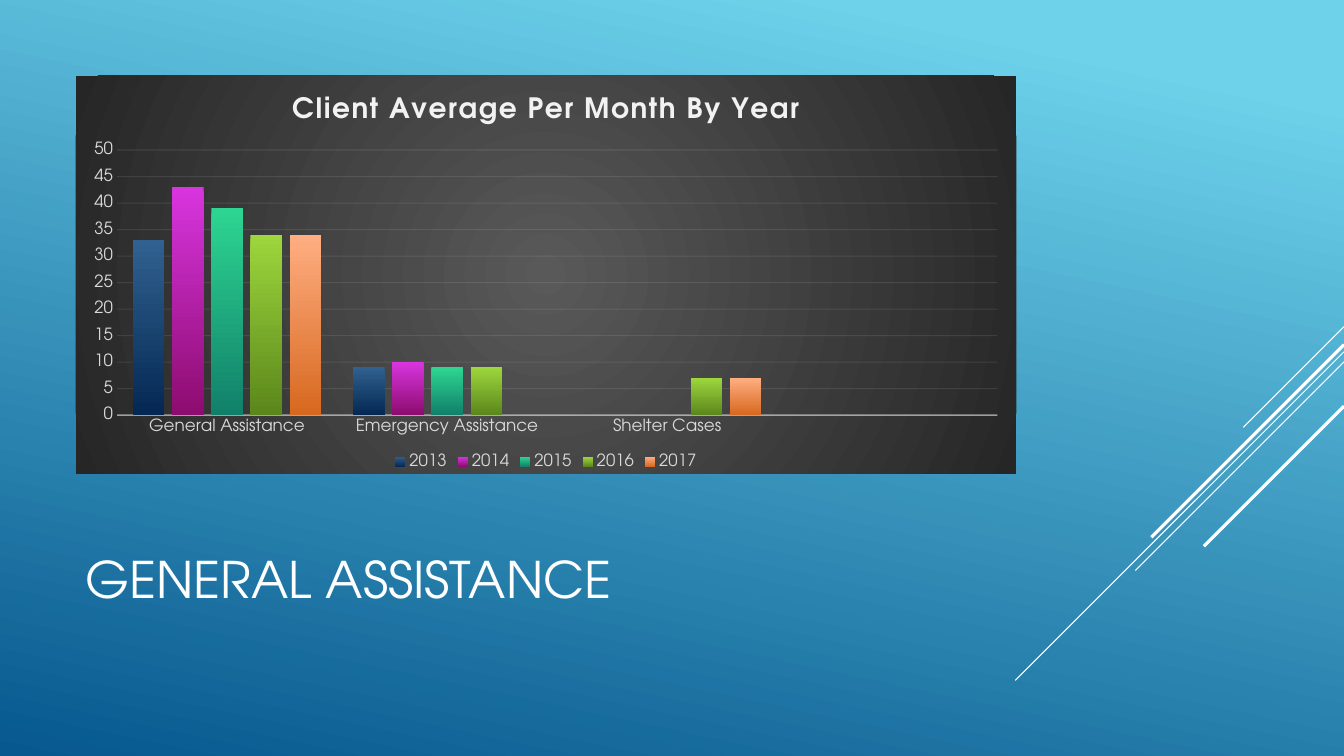
from lxml import etree
from pptx import Presentation
from pptx.chart.data import CategoryChartData
from pptx.dml.color import RGBColor
from pptx.enum import chart as ch, shapes, text
from pptx.oxml import parse_xml
from pptx.oxml.ns import nsdecls, qn
from pptx.util import Inches, Pt

FONT = "TeX Gyre Adventor"
COLORS = {"white": "FFFFFF", "label": "D9D9D9", "pale": "F2F2F2",
          "sky": "6ED2EB", "sea": "06588E", "grey": "595959", "dark": "262626"}
TITLE = "GENERAL ASSISTANCE"
CHART_TITLE = "Client Average Per Month By Year"
CATEGORIES = ["General Assistance", "Emergency Assistance", "Shelter Cases", ""]
SERIES = [  # year, values, top colour, bottom colour
    ("2013", (33, 9, None, None), "316190", "042853"),
    ("2014", (43, 10, None, None), "D835DF", "8D0C6F"),
    ("2015", (39, 9, None, None), "2ED592", "11806A"),
    ("2016", (34, 9, 7, None), "9DD63D", "5B871B"),
    ("2017", (34, None, 7, None), "FFAE82", "D7681F"),
]
PLOT = {"x": 0.044, "y": 0.187, "w": 0.936, "h": 0.666}  # shares of the chart
RIGHT = 13.33
DIAGONALS = [  # top at the right edge, run to the lower left, weight
    (3.24, 1.00, 0.75), (3.49, 3.26, 0.75), (3.59, 2.07, 0.75),
    (3.42, 1.91, 2.25), (4.03, 1.39, 2.25),
]


def rgb(value):
    return RGBColor.from_string(value)


def set_font(font, size, color, bold=False):
    values = {"name": FONT, "size": Pt(size), "bold": bold}
    for name, value in values.items():
        setattr(font, name, value)
    font.color.rgb = rgb(color)


def set_gradient(fill, stops, angle):
    """Two-stop gradient; angle is clockwise, in degrees."""
    fill.gradient()
    fill.gradient_angle = 360 - angle
    for stop, (position, color) in zip(fill.gradient_stops, stops):
        stop.position = position
        stop.color.rgb = rgb(color)


def set_line(line, width, opacity):
    line.width = Pt(width)
    line.color.rgb = rgb(COLORS["pale"])
    clr = next(line.fill._xPr.iter(qn("a:srgbClr")))
    etree.SubElement(clr, qn("a:alpha")).set("val", str(opacity * 1000))


def add_diagonal(s, top, run, width):
    line = s.shapes.add_connector(
        shapes.MSO_CONNECTOR.STRAIGHT, Inches(RIGHT), Inches(top),
        Inches(RIGHT - run), Inches(top + run))
    line.line.color.rgb = rgb(COLORS["white"])
    line.line.width = Pt(width)
    etree.SubElement(line._element.spPr, qn("a:effectLst"))


def add_title(s):
    box = s.shapes.add_textbox(Inches(0.75), Inches(4.91), Inches(9.33), Inches(1.65))
    tf = box.text_frame
    tf.word_wrap = True
    tf.vertical_anchor = text.MSO_ANCHOR.MIDDLE
    r = tf.paragraphs[0].add_run()
    r.text = TITLE
    set_font(r.font, 36, COLORS["white"])


def style_chart_area(chart):
    """Radial background for the chart and a fixed inner plot area."""
    stops = "".join(
        f'<a:gs pos="{pos}"><a:srgbClr val="{COLORS[name]}"/></a:gs>'
        for pos, name in ((0, "grey"), (100000, "dark")))
    area = parse_xml(
        f'<c:spPr {nsdecls("c", "a")}><a:gradFill><a:gsLst>{stops}</a:gsLst>'
        '<a:path path="circle"><a:fillToRect l="50000" t="50000" r="50000" b="50000"/>'
        '</a:path></a:gradFill><a:ln><a:noFill/></a:ln></c:spPr>')
    root = chart._chartSpace
    root.find(qn("c:chart")).addnext(area)

    modes = '<c:xMode val="edge"/><c:yMode val="edge"/>'
    sizes = "".join(f'<c:{key} val="{share}"/>' for key, share in PLOT.items())
    layout = parse_xml(
        f'<c:layout {nsdecls("c")}><c:manualLayout><c:layoutTarget val="inner"/>'
        f'{modes}{sizes}</c:manualLayout></c:layout>')
    plot_area = next(root.iter(qn("c:plotArea")))
    for old in plot_area.findall(qn("c:layout")):
        plot_area.remove(old)
    plot_area.insert(0, layout)


def add_client_chart(s):
    data = CategoryChartData()
    data.categories = CATEGORIES
    for year, values, *_ in SERIES:
        data.add_series(year, values)
    chart = s.shapes.add_chart(
        ch.XL_CHART_TYPE.COLUMN_CLUSTERED, Inches(0.75), Inches(0.75),
        Inches(9.33), Inches(3.95), data).chart
    set_font(chart.font, 10, COLORS["white"])
    style_chart_area(chart)

    chart.has_title = True
    r = chart.chart_title.text_frame.paragraphs[0].add_run()
    r.text = CHART_TITLE
    set_font(r.font, 20, COLORS["pale"], bold=True)
    r.font._element.set("spc", "100")
    chart.chart_title.include_in_layout = False

    plot = chart.plots[0]
    for name, value in {"gap_width": 100, "overlap": -24, "vary_by_categories": False}.items():
        setattr(plot, name, value)
    for series, (_, _, top, bottom) in zip(plot.series, SERIES):
        set_gradient(series.format.fill, [(0, top), (1, bottom)], 90)

    for axis in (chart.category_axis, chart.value_axis):
        axis.major_tick_mark = axis.minor_tick_mark = ch.XL_TICK_MARK.NONE
        set_font(axis.tick_labels.font, 12, COLORS["label"])
    set_line(chart.category_axis.format.line, 1, 54)
    values = chart.value_axis
    values.minimum_scale, values.maximum_scale, values.major_unit = 0, 50, 5
    values.format.line.fill.background()
    set_line(values.major_gridlines.format.line, 0.75, 10)

    chart.has_legend = True
    chart.legend.position = ch.XL_LEGEND_POSITION.BOTTOM
    chart.legend.include_in_layout = False
    set_font(chart.legend.font, 12, COLORS["label"])


def main():
    prs = Presentation()
    prs.slide_width, prs.slide_height = Inches(RIGHT), Inches(7.5)
    s = prs.slides.add_slide(prs.slide_layouts[6])
    set_gradient(s.background.fill, [(0.1, COLORS["sky"]), (1, COLORS["sea"])], 102)
    for diagonal in DIAGONALS:
        add_diagonal(s, *diagonal)
    add_title(s)
    add_client_chart(s)
    prs.save("out.pptx")


if __name__ == "__main__":
    main()
